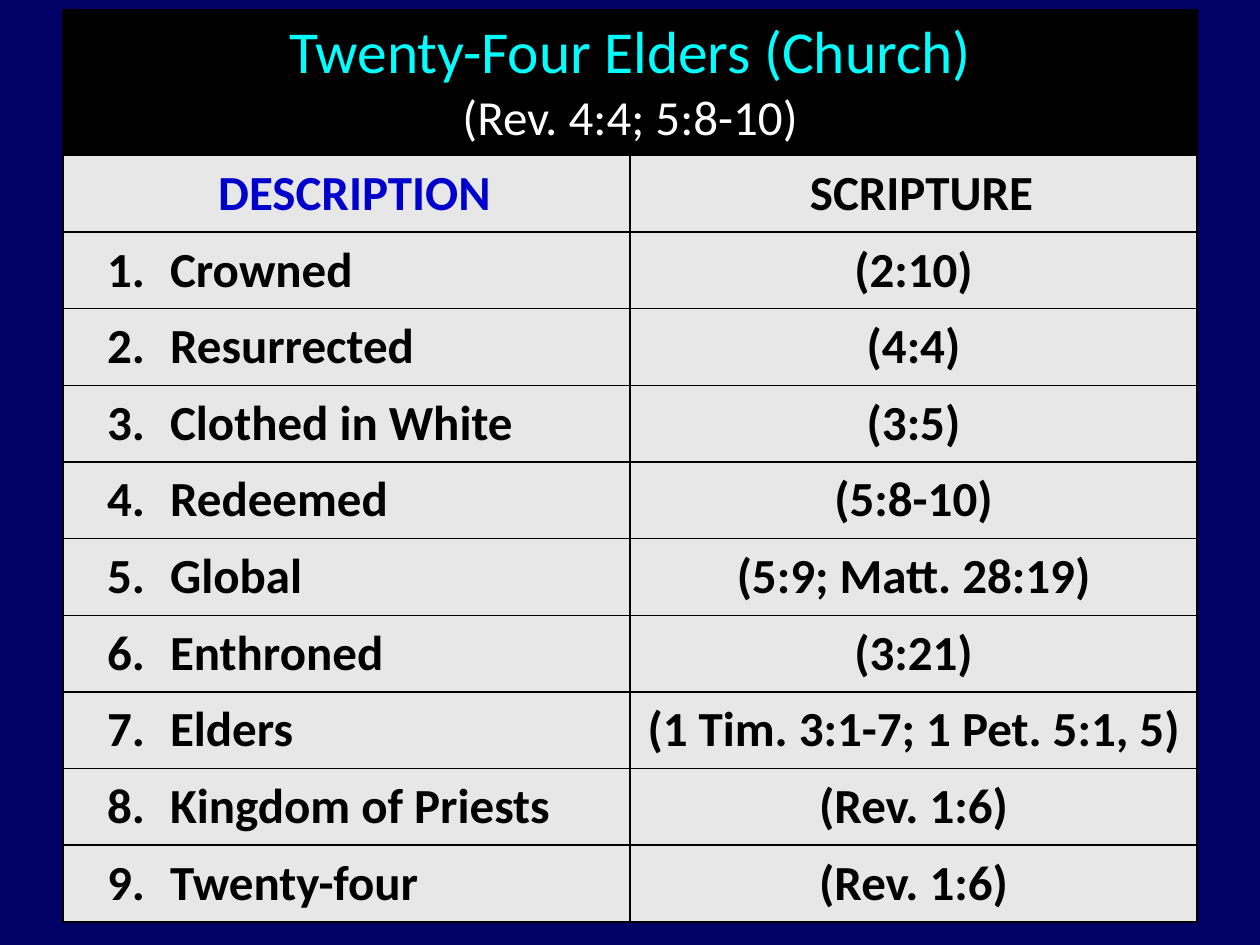
from dataclasses import dataclass

from lxml import etree
from pptx import Presentation
from pptx import util as u
from pptx.dml.color import RGBColor
from pptx.enum import text
from pptx.oxml import ns


@dataclass(frozen=True)
class Theme:
    font: str = "Calibri"
    big: int = 34
    size: int = 28
    back: str = "000066"
    black: str = "000000"
    pale: str = "E7E7E7"
    cyan: str = "00FFFF"
    white: str = "FFFFFF"
    blue: str = "0000CC"


THEME = Theme()
MID = text.PP_ALIGN.CENTER
LEFT = text.PP_ALIGN.LEFT

ELDERS = [
    ("Crowned", "(2:10)"),
    ("Resurrected", "(4:4)"),
    ("Clothed in White", "(3:5)"),
    ("Redeemed", "(5:8-10)"),
    ("Global", "(5:9; Matt. 28:19)"),
    ("Enthroned", "(3:21)"),
    ("Elders", "(1 Tim. 3:1-7; 1 Pet. 5:1, 5)"),
    ("Kingdom of Priests", "(Rev. 1:6)"),
    ("Twenty-four", "(Rev. 1:6)"),
]


def add_run(para, words, color, size=THEME.size, bold=True):
    run = para.add_run()
    run.text = words
    font = run.font
    font.name, font.size, font.bold = THEME.font, u.Pt(size), bold
    font.color.rgb = RGBColor.from_string(color)


def set_para(para, align, margin=0, hang=0):
    para.alignment = align
    props = para._p.get_or_add_pPr()
    props.set("marL", str(u.Pt(margin)))
    props.set("indent", str(u.Pt(-hang)))


def add_line(cell, words, color=THEME.black, align=MID, margin=0, hang=0):
    para = cell.text_frame.paragraphs[0]
    set_para(para, align, margin, hang)
    add_run(para, words, color)


def style_cell(cell, fill):
    cell.vertical_anchor = text.MSO_ANCHOR.MIDDLE
    cell.fill.solid()
    cell.fill.fore_color.rgb = RGBColor.from_string(fill)
    # Borders come before the fill
    props = cell._tc.get_or_add_tcPr()
    for spot, side in enumerate(("lnL", "lnR", "lnT", "lnB")):
        line = etree.Element(ns.qn(f"a:{side}"), w=str(u.Pt(1)))
        paint = etree.SubElement(line, ns.qn("a:solidFill"))
        etree.SubElement(paint, ns.qn("a:srgbClr"), val=THEME.black)
        props.insert(spot, line)


def add_grid(slide):
    count = len(ELDERS) + 2
    frame = slide.shapes.add_table(
        count, 2, u.Pt(36), u.Pt(5.8), u.Pt(648), u.Pt(521))
    grid = frame.table
    grid.first_row = grid.horz_banding = False
    for index, row in enumerate(grid.rows):
        row.height = u.Pt(43.8 if index else 83)
        for cell in row.cells:
            style_cell(cell, THEME.pale if index else THEME.black)
    return grid


def add_title(grid):
    cell = grid.cell(0, 0)
    cell.merge(grid.cell(0, 1))
    frame = cell.text_frame
    head, sub = frame.paragraphs[0], frame.add_paragraph()
    for para in (head, sub):
        set_para(para, MID)
    add_run(head, "Twenty-Four Elders (Church)", THEME.cyan, THEME.big, False)
    add_run(sub, "(Rev. 4:4; 5:8-10)", THEME.white, bold=False)


def main():
    deck = Presentation()
    deck.slide_width, deck.slide_height = u.Pt(720), u.Pt(540)
    slide = deck.slides.add_slide(deck.slide_layouts[6])
    slide.background.fill.solid()
    slide.background.fill.fore_color.rgb = RGBColor.from_string(THEME.back)

    # Title and column heads
    grid = add_grid(slide)
    add_title(grid)
    add_line(grid.cell(1, 0), "DESCRIPTION", THEME.blue, margin=9)
    add_line(grid.cell(1, 1), "SCRIPTURE", margin=9)

    # Numbered traits with their verses
    for num, (trait, verse) in enumerate(ELDERS, 1):
        add_line(grid.cell(num + 1, 0), f"{num}.\t{trait}",
                 align=LEFT, margin=54, hang=36)
        add_line(grid.cell(num + 1, 1), verse)

    deck.save("out.pptx")


if __name__ == "__main__":
    main()
